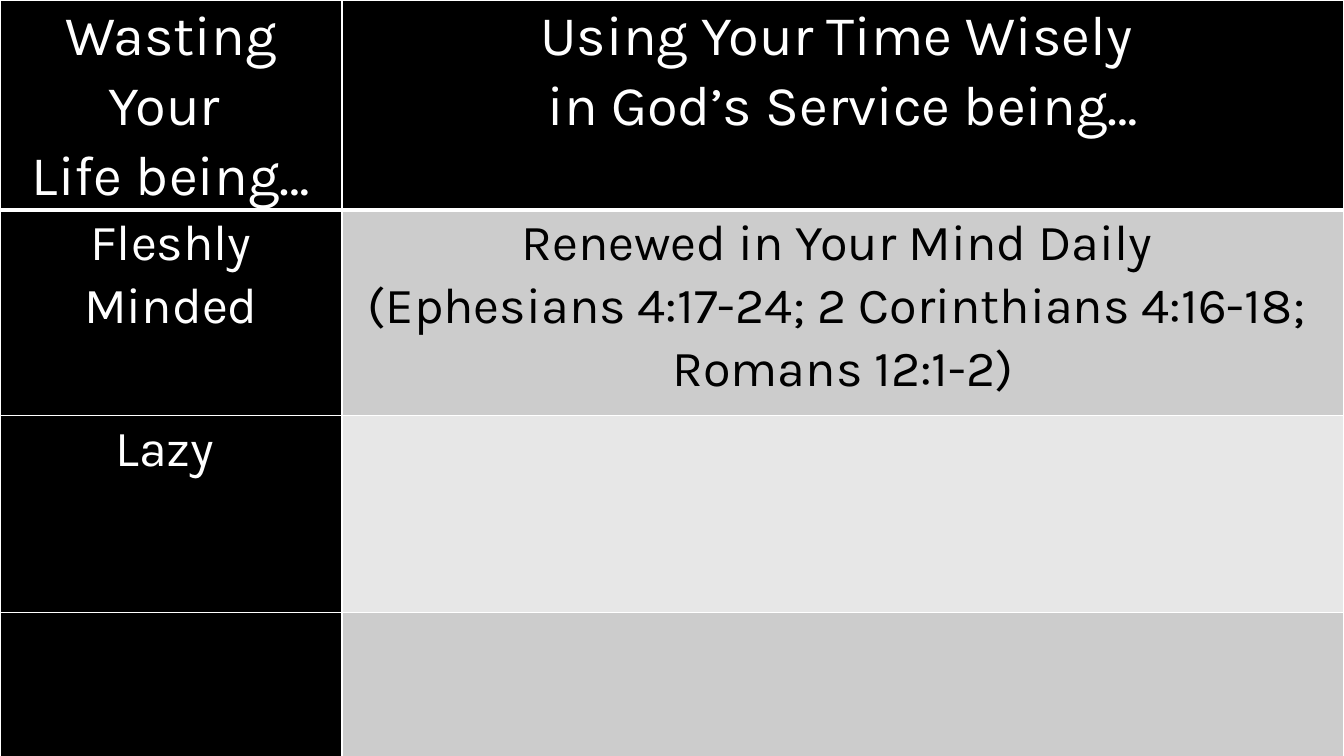
from lxml import etree
from pptx import Presentation
from pptx.dml.color import RGBColor
from pptx.enum.text import PP_ALIGN
from pptx.oxml.ns import qn
from pptx.util import Pt

EMU_PER_PX = 914400 / 100.8
CENTER = PP_ALIGN.CENTER
BLACK, WHITE, GREY, LIGHT_GREY = "000000", "FFFFFF", "CCCCCC", "E7E7E7"
COLUMN_WIDTHS = [342, 1002]
ROWS = [
    (159, 40, BLACK, WHITE,
     ["Wasting Your ", "Life being…"],
     ["Using Your Time Wisely ", "in God’s Service being…"]),
    (206, 36, GREY, BLACK,
     ["Fleshly Minded"],
     ["Renewed in Your Mind Daily ",
      "(Ephesians 4:17-24; 2 Corinthians 4:16-18; ",
      "Romans 12:1-2)"]),
    (197, 36, LIGHT_GREY, BLACK, ["Lazy "], []),
    (194, 36, GREY, BLACK, [], []),
]


def px(length):
    return round(length * EMU_PER_PX)


def color(code):
    return RGBColor.from_string(code)


presentation = Presentation()
presentation.slide_width = px(1344)
presentation.slide_height = px(756)
slide = presentation.slides.add_slide(presentation.slide_layouts[6])
slide.background.fill.solid()
slide.background.fill.fore_color.rgb = color(BLACK)

table = slide.shapes.add_table(
    len(ROWS), len(COLUMN_WIDTHS), 0, 0, px(1344), px(756)).table
for column, width in zip(table.columns, COLUMN_WIDTHS):
    column.width = px(width)

for row_index, (height, size, right_fill, right_text, left, right) in enumerate(ROWS):
    table.rows[row_index].height = px(height)
    columns = [(BLACK, WHITE, left), (right_fill, right_text, right)]
    for column_index, (fill, text_color, lines) in enumerate(columns):
        cell = table.cell(row_index, column_index)
        cell.margin_left = cell.margin_right = px(7)
        cell.margin_top = cell.margin_bottom = 0

        properties = cell._tc.get_or_add_tcPr()
        for side in ("L", "R", "T", "B"):
            under_header = (row_index, side) in ((0, "B"), (1, "T"))
            border = etree.SubElement(properties, qn(f"a:ln{side}"))
            border.set("w", str(Pt(3 if under_header else 1)))
            border_fill = etree.SubElement(border, qn("a:solidFill"))
            etree.SubElement(border_fill, qn("a:srgbClr")).set("val", WHITE)
        cell.fill.solid()
        cell.fill.fore_color.rgb = color(fill)

        frame = cell.text_frame
        for line_index, line in enumerate(lines):
            paragraph = frame.add_paragraph() if line_index else frame.paragraphs[0]
            paragraph.alignment = CENTER
            paragraph.line_spacing = 1.07
            run = paragraph.add_run()
            run.text = line
            run.font.name = "Karla"
            run.font.size = Pt(size)
            run.font.bold = False
            run.font.color.rgb = color(text_color)

presentation.save("out.pptx")
